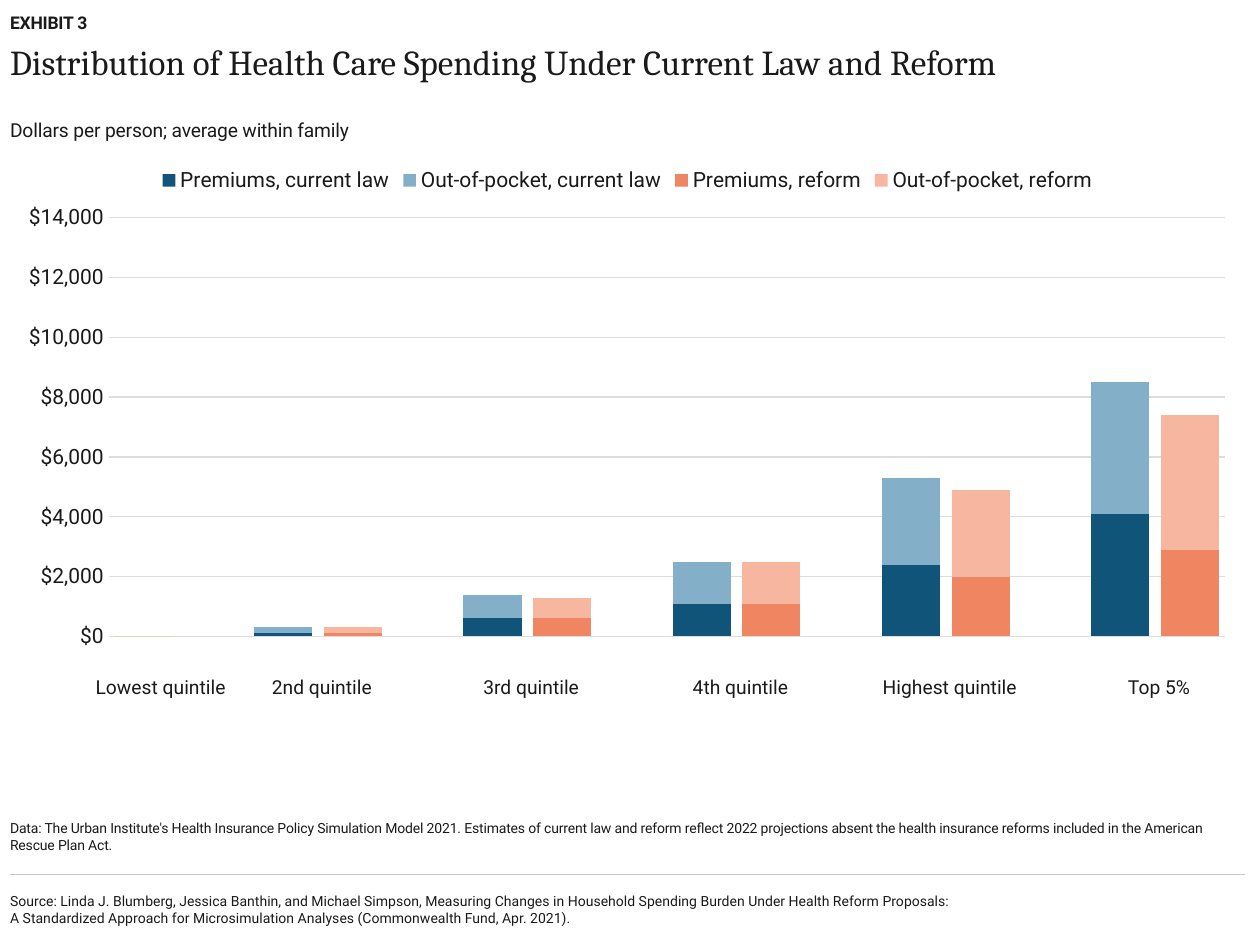
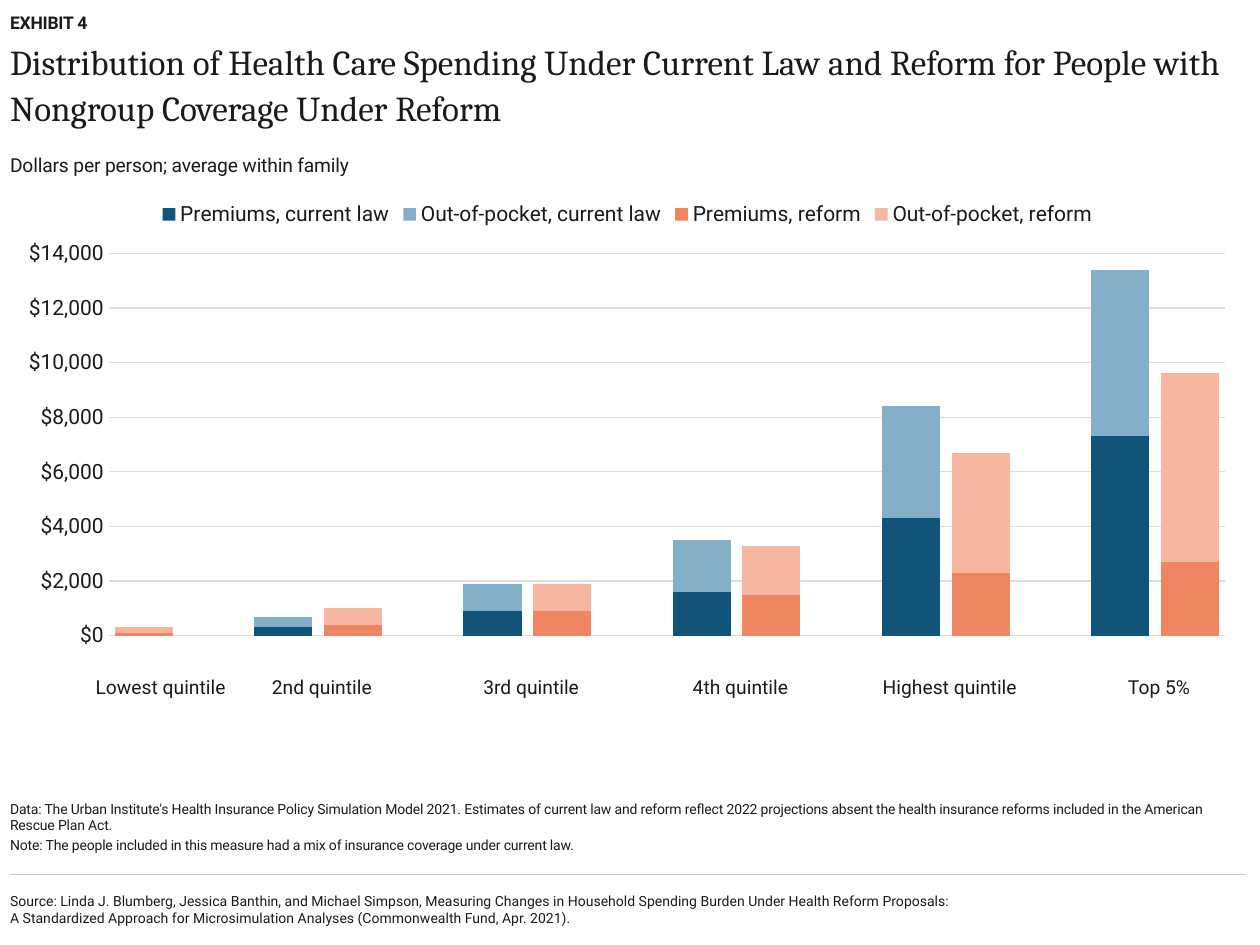
from lxml import etree
from pptx import Presentation
from pptx.chart.data import CategoryChartData
from pptx.dml.color import RGBColor
from pptx.enum.chart import XL_CHART_TYPE, XL_LEGEND_POSITION, XL_TICK_MARK
from pptx.enum.shapes import MSO_CONNECTOR
from pptx.enum.text import MSO_ANCHOR, PP_ALIGN
from pptx.oxml.ns import qn
from pptx.util import Inches, Pt

STACKED = XL_CHART_TYPE.COLUMN_STACKED
LEGEND_TOP = XL_LEGEND_POSITION.TOP
NO_TICK = XL_TICK_MARK.NONE
STRAIGHT = MSO_CONNECTOR.STRAIGHT
TOP, MIDDLE, BOTTOM = MSO_ANCHOR.TOP, MSO_ANCHOR.MIDDLE, MSO_ANCHOR.BOTTOM
CENTER = PP_ALIGN.CENTER

COLORS = {
    "ink": "1A1A1A", "rule": "C6C6C6", "grid": "DDDDDD",
    "Premiums, current law": "115479", "Out-of-pocket, current law": "83B0C8",
    "Premiums, reform": "F08661", "Out-of-pocket, reform": "F6B6A0",
}
SERIF, SANS = "Cambria", "Roboto"
WIDTH, HEIGHT = Inches(10), Inches(7.5)
COLS, ROWS = 100, 75
LEFT, SPAN = 0.8, 98     # content margin and width, in columns
SLOTS, STEP = 16, 3      # each group takes two bars and a gap
PLOT_X, PLOT_W = 0.08, 0.904

TITLE = "Distribution of Health Care Spending Under Current Law and Reform"
UNITS = "Dollars per person; average within family"
DATA = ("Data: The Urban Institute's Health Insurance Policy Simulation Model 2021. "
        "Estimates of current law and reform reflect 2022 projections absent the "
        "health insurance reforms included in the American Rescue Plan Act.")
NOTE = ("Note: The people included in this measure had a mix of insurance "
        "coverage under current law.")
SOURCE = [
    "Source: Linda J. Blumberg, Jessica Banthin, and Michael Simpson, Measuring "
    "Changes in Household Spending Burden Under Health Reform Proposals:",
    "A Standardized Approach for Microsimulation Analyses "
    "(Commonwealth Fund, Apr. 2021).",
]
GROUPS = ["Lowest quintile", "2nd quintile", "3rd quintile", "4th quintile",
          "Highest quintile", "Top 5%"]

# Current law has bars from the 2nd quintile up; reform has all six groups.
EXHIBITS = [
    {
        "tag": "EXHIBIT 3", "title": TITLE, "notes": [DATA],
        "units": (8.9, 2.8), "chart": (12.2, 49.7), "plot": (0.102, 0.669),
        "values": [
            [100, 600, 1100, 2400, 4100],
            [200, 800, 1400, 2900, 4400],
            [0, 100, 600, 1100, 2000, 2900],
            [0, 200, 700, 1400, 2900, 4500],
        ],
    },
    {
        "tag": "EXHIBIT 4",
        "title": TITLE + " for People with Nongroup Coverage Under Reform",
        "notes": [DATA, NOTE],
        "units": (11.7, 2.7), "chart": (14.9, 47.8), "plot": (0.109, 0.635),
        "values": [
            [300, 900, 1600, 4300, 7300],
            [400, 1000, 1900, 4100, 6100],
            [100, 400, 900, 1500, 2300, 2700],
            [200, 600, 1000, 1800, 4400, 6900],
        ],
    },
]


def col(n):
    return round(WIDTH * n / COLS)


def row(n):
    return round(HEIGHT * n / ROWS)


def rgb(name):
    return RGBColor.from_string(COLORS[name])


def style(font, size, face=SANS, bold=False):
    font.size, font.name, font.bold = Pt(size), face, bold
    font.color.rgb = rgb("ink")


def add_text(slide, place, lines, size, face=SANS, bold=False, anchor=TOP,
             align=None, lead=None, gap=0, track=0):
    """Place is left, top, width and height in columns and rows."""
    x, y, w, h = place
    frame = slide.shapes.add_textbox(col(x), row(y), col(w), row(h)).text_frame
    frame.word_wrap = True
    frame.vertical_anchor = anchor
    frame.margin_left = frame.margin_right = 0
    frame.margin_top = frame.margin_bottom = 0
    for i, line in enumerate(lines):
        para = frame.paragraphs[0] if i == 0 else frame.add_paragraph()
        para.alignment, para.line_spacing = align, lead
        if i and gap:
            para.space_before = Pt(gap)
        run = para.add_run()
        run.text = line
        style(run.font, size, face, bold)
        if track:
            run.font._element.set("spc", str(track))


def add_rule(slide, y):
    line = slide.shapes.add_connector(
        STRAIGHT, col(LEFT + SPAN), row(y), col(LEFT), row(y))
    line.line.color.rgb = rgb("rule")
    line.line.width = Pt(0.75)
    etree.SubElement(line._element.spPr, qn("a:effectLst"))


def add_footer(slide):
    add_rule(slide, 69.4)
    add_text(slide, (LEFT, 69.9, 79.9, 4.6), SOURCE, 8, anchor=MIDDLE)


def spread(vals):
    """Put a series on every third slot, ending with its last group."""
    slots = [None] * SLOTS
    start = 0 if len(vals) == len(GROUPS) else STEP - 1
    slots[start::STEP] = vals
    return slots


def fix_plot(chart, y, h):
    """Pin the inner plot area to shares of the chart's size."""
    area = chart._chartSpace.find(".//" + qn("c:plotArea"))
    for old in area.findall(qn("c:layout")):
        area.remove(old)
    layout = etree.Element(qn("c:layout"))
    manual = etree.SubElement(layout, qn("c:manualLayout"))
    parts = {"layoutTarget": "inner", "xMode": "edge", "yMode": "edge",
             "x": PLOT_X, "y": y, "w": PLOT_W, "h": h}
    for name, val in parts.items():
        etree.SubElement(manual, qn("c:" + name)).set("val", str(val))
    area.insert(0, layout)


def add_bars(slide, top, tall, plot, values):
    data = CategoryChartData(number_format='"$"#,##0')
    data.categories = [str(i + 1) for i in range(SLOTS)]
    names = [name for name in COLORS if "," in name]
    for name, vals in zip(names, values):
        data.add_series(name, spread(vals))
    chart = slide.shapes.add_chart(
        STACKED, col(LEFT), row(top), col(SPAN), row(tall), data).chart
    style(chart.font, 10)
    chart.has_title = False
    chart.has_legend = True
    chart.legend.position = LEGEND_TOP
    chart.legend.include_in_layout = False
    style(chart.legend.font, 12)

    bars = chart.plots[0]
    bars.gap_width, bars.overlap = 20, 100
    bars.vary_by_categories = False
    for series in bars.series:
        series.format.fill.solid()
        series.format.fill.fore_color.rgb = rgb(series.name)
        series.invert_if_negative = False

    chart.category_axis.visible = False
    axis = chart.value_axis
    axis.minimum_scale, axis.maximum_scale, axis.major_unit = 0, 14000, 2000
    axis.major_tick_mark = axis.minor_tick_mark = NO_TICK
    axis.format.line.fill.background()
    axis.tick_labels.number_format = '"$"#,##0'
    axis.tick_labels.number_format_is_linked = False
    style(axis.tick_labels.font, 12)
    grid = axis.major_gridlines.format.line
    grid.color.rgb = rgb("grid")
    grid.width = Pt(0.75)
    fix_plot(chart, *plot)


def add_groups(slide):
    """Centre a label under each pair; the first sits right of its lone bar."""
    wide = 14
    pitch = SPAN * PLOT_W * STEP / SLOTS
    start = LEFT + SPAN * PLOT_X + 0.3
    for i, name in enumerate(GROUPS):
        mid = start + pitch * i if i else 12.75
        add_text(slide, (mid - wide / 2, 53.6, wide, 1.9), [name], 11,
                 align=CENTER)


def add_exhibit(deck, item):
    slide = deck.slides.add_slide(deck.slide_layouts[6])
    add_footer(slide)
    add_text(slide, (LEFT, 2.9, SPAN, 8.3), [item["title"]], 20, SERIF, lead=1.1)
    add_bars(slide, *item["chart"], item["plot"], item["values"])
    add_text(slide, (LEFT, 0.5, SPAN, 2.1), [item["tag"]], 10, bold=True,
             anchor=BOTTOM, track=-10)
    add_text(slide, (LEFT, 59.5, SPAN, 8.2), item["notes"], 8,
             anchor=BOTTOM, gap=1.5, track=-10)
    top, tall = item["units"]
    add_text(slide, (LEFT, top, SPAN, tall), [UNITS], 11, anchor=MIDDLE, track=-10)
    add_groups(slide)


def main():
    deck = Presentation()
    deck.slide_width, deck.slide_height = WIDTH, HEIGHT
    for item in EXHIBITS:
        add_exhibit(deck, item)
    deck.save("out.pptx")


if __name__ == "__main__":
    main()
